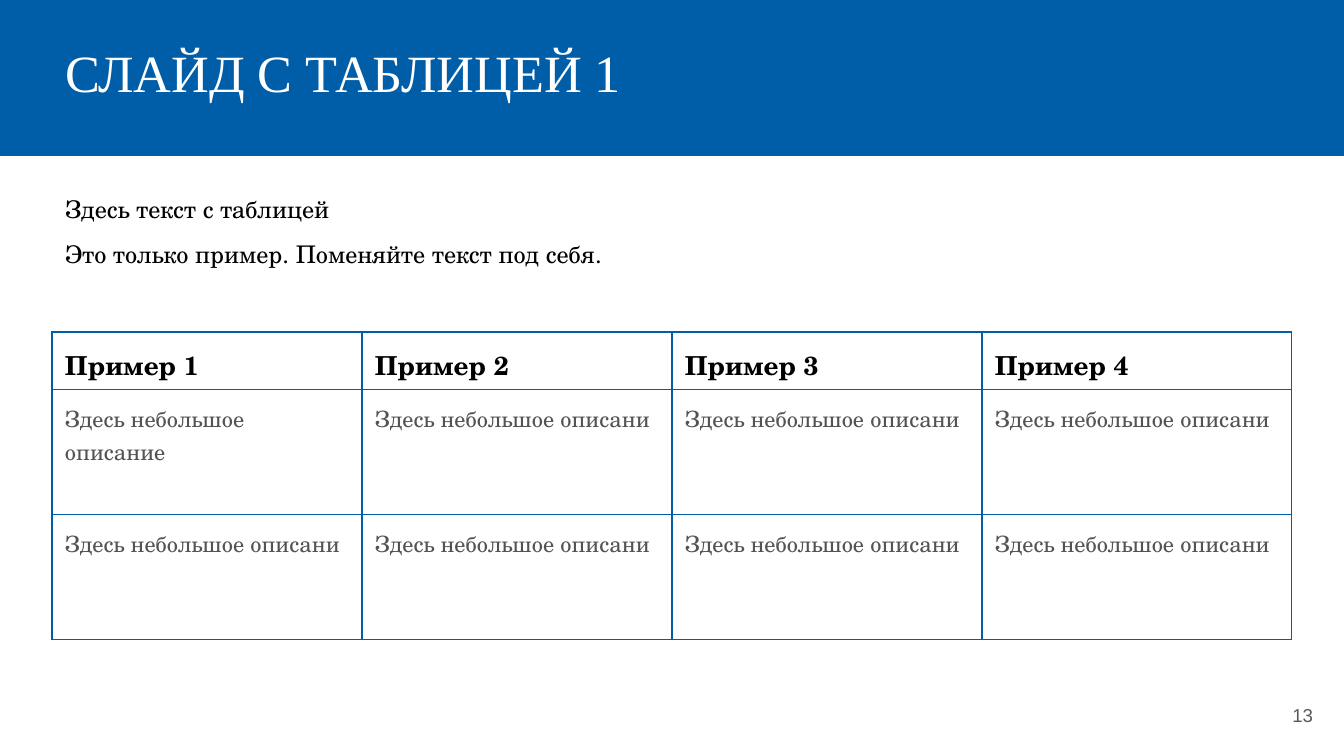
from lxml import etree
from pptx import Presentation
from pptx.dml.color import RGBColor
from pptx.enum.shapes import MSO_SHAPE
from pptx.enum.text import MSO_ANCHOR, MSO_AUTO_SIZE, PP_ALIGN
from pptx.oxml.ns import qn
from pptx.util import Pt

RECTANGLE = MSO_SHAPE.RECTANGLE
TOP, MIDDLE = MSO_ANCHOR.TOP, MSO_ANCHOR.MIDDLE
LEFT, RIGHT = PP_ALIGN.LEFT, PP_ALIGN.RIGHT
SHRINK = MSO_AUTO_SIZE.TEXT_TO_FIT_SHAPE

BLUE = RGBColor(0x00, 0x5E, 0xA8)
WHITE = RGBColor(0xFF, 0xFF, 0xFF)
BLACK = RGBColor(0x00, 0x00, 0x00)
DARK_GRAY = RGBColor(0x54, 0x53, 0x52)
GRAY = RGBColor(0x59, 0x59, 0x59)
SERIF, TITLE_FONT, NUMBER_FONT = "TeX Gyre Schola", "Times New Roman", "Arial"

TITLE = "СЛАЙД С ТАБЛИЦЕЙ 1"
INTRO = ["Здесь текст с таблицей", "Это только пример. Поменяйте текст под себя."]
PAGE_NUMBER = "13"
DESCRIPTION = "Здесь небольшое описани"
ROWS = [
    [f"Пример {number}" for number in range(1, 5)],
    ["Здесь небольшое описание"] + [DESCRIPTION] * 3,
    [DESCRIPTION] * 4,
]

WIDTH, HEIGHT = 1344, 756
MARGIN = 52
CONTENT_WIDTH = WIDTH - 2 * MARGIN
INSET = 13
COLUMN_WIDTH = CONTENT_WIDTH // 4
ROW_HEIGHTS = [53, 125, 125]
TABLE_TOP = 332


def px(length):
    return round(length * 914400 / 134.4)


def set_insets(holder):
    holder.margin_left = holder.margin_right = px(INSET)
    holder.margin_top = holder.margin_bottom = px(INSET)


def style(paragraph, font_name, size, color, bold=False):
    font = paragraph.font
    font.name, font.size, font.bold = font_name, Pt(size), bold
    font.color.rgb = color


def add_text(slide, box, lines, font_name, size, color, anchor=TOP, align=LEFT):
    frame = slide.shapes.add_textbox(*map(px, box)).text_frame
    frame.word_wrap = True
    frame.vertical_anchor = anchor
    set_insets(frame)
    frame.text = "\n".join(lines)
    for paragraph in frame.paragraphs:
        paragraph.alignment = align
        style(paragraph, font_name, size, color)
    return frame


def add_borders(cell):
    properties = cell._tc.get_or_add_tcPr()
    for position, side in enumerate(("lnL", "lnR", "lnT", "lnB")):
        line = etree.Element(qn(f"a:{side}"), w=str(Pt(0.75)))
        fill = etree.SubElement(line, qn("a:solidFill"))
        etree.SubElement(fill, qn("a:srgbClr"), val=str(BLUE))
        properties.insert(position, line)


def add_examples(slide):
    table = slide.shapes.add_table(
        len(ROWS), len(ROWS[0]), px(MARGIN), px(TABLE_TOP),
        px(CONTENT_WIDTH), px(sum(ROW_HEIGHTS)),
    ).table
    table.horz_banding = False
    for column in table.columns:
        column.width = px(COLUMN_WIDTH)
    for row, height, texts in zip(table.rows, ROW_HEIGHTS, ROWS):
        row.height = px(height)
        is_header = texts is ROWS[0]
        for cell, text in zip(row.cells, texts):
            cell.text = text
            set_insets(cell)
            cell.fill.background()
            add_borders(cell)
            size, color = (14, BLACK) if is_header else (12, DARK_GRAY)
            style(cell.text_frame.paragraphs[0], SERIF, size, color, is_header)


def main():
    deck = Presentation()
    deck.slide_width, deck.slide_height = px(WIDTH), px(HEIGHT)
    slide = deck.slides.add_slide(deck.slide_layouts[6])

    banner = slide.shapes.add_shape(RECTANGLE, 0, 0, px(WIDTH), px(156))
    banner.shadow.inherit = False
    banner.fill.solid()
    banner.fill.fore_color.rgb = BLUE
    banner.line.fill.background()

    add_text(slide, (MARGIN, 27, CONTENT_WIDTH, 90), [TITLE],
             TITLE_FONT, 28, WHITE, MIDDLE)
    add_text(slide, (1246, 686, 80, 58), [PAGE_NUMBER],
             NUMBER_FONT, 10, GRAY, MIDDLE, RIGHT)
    add_examples(slide)

    intro = add_text(slide, (MARGIN, 184, CONTENT_WIDTH, 118), INTRO,
                     SERIF, 14, BLACK)
    intro.auto_size = SHRINK
    for paragraph in intro.paragraphs:
        paragraph.line_spacing = 1.15
    intro.paragraphs[1].space_before = Pt(12)
    intro.paragraphs[1].space_after = Pt(12)

    deck.save("out.pptx")


if __name__ == "__main__":
    main()
